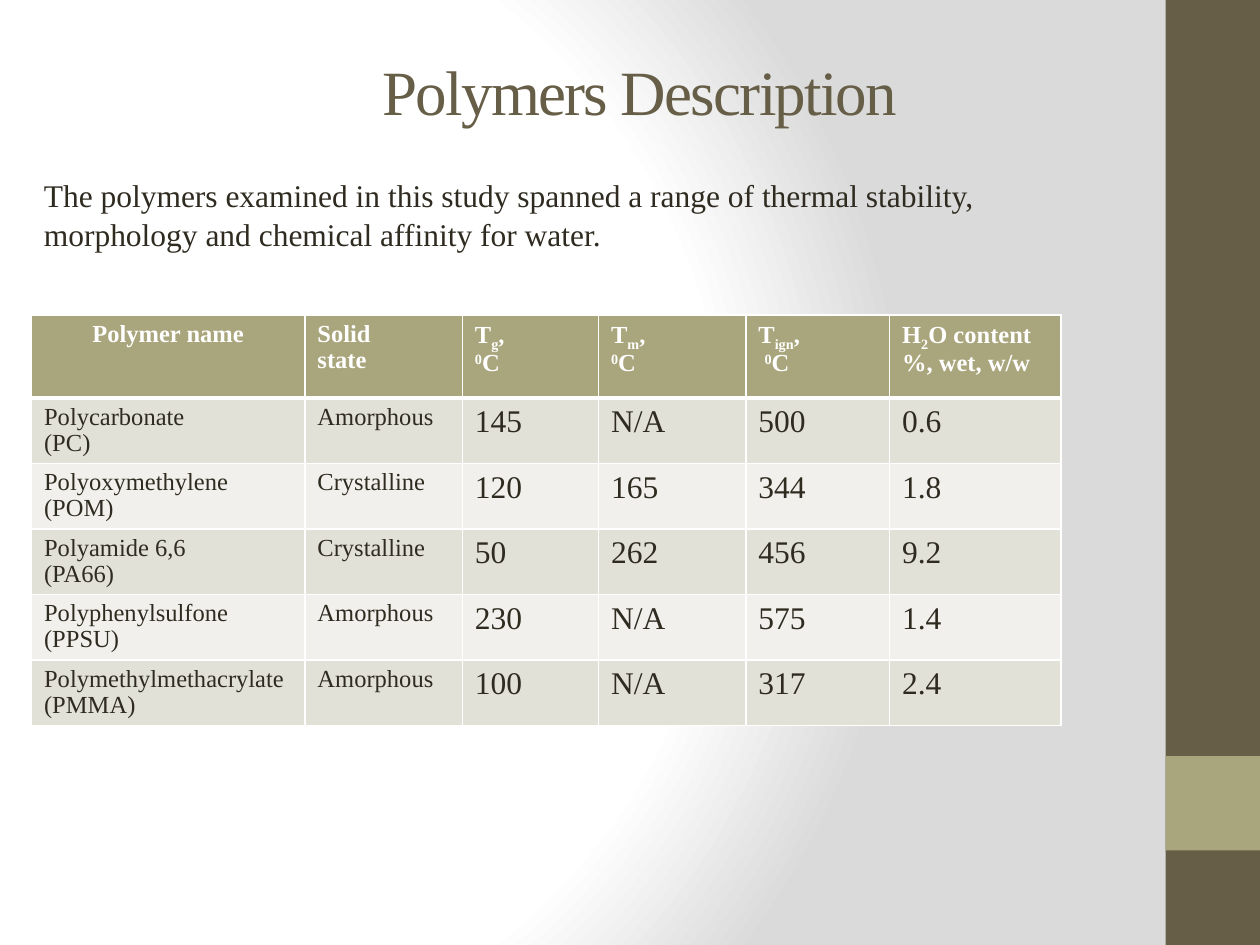
from lxml import etree
from pptx import Presentation
from pptx.dml.color import RGBColor
from pptx.enum.shapes import MSO_SHAPE
from pptx.enum.text import MSO_ANCHOR, PP_ALIGN
from pptx.oxml import parse_xml
from pptx.oxml.ns import nsdecls, qn
from pptx.util import Inches, Pt

RECTANGLE = MSO_SHAPE.RECTANGLE
MIDDLE, TOP = MSO_ANCHOR.MIDDLE, MSO_ANCHOR.TOP
CENTER, LEFT = PP_ALIGN.CENTER, PP_ALIGN.LEFT

FONT = "Times New Roman"
COLORS = {
    "brown": "675E47", "olive": "A9A57C", "ink": "2F2B20", "white": "FFFFFF",
    "grey": "DADADA", "odd_row": "E2E1D7", "even_row": "F1F0EC",
}
TITLE = "Polymers Description"
INTRO = ("The polymers examined in this study spanned a range of thermal stability, "
         "morphology and chemical affinity for water.")
SUB, SUPER = -25, 30
DEGREES = [("0", SUPER), ("C", 0)]
HEADERS = [
    ["Polymer name"],
    ["Solid", "state"],
    [[("T", 0), ("g", SUB), (",", 0)], DEGREES],
    [[("T", 0), ("m", SUB), (",", 0)], DEGREES],
    [[("T", 0), ("ign", SUB), (",", 0)], [(" ", 0), *DEGREES]],
    [[("H", 0), ("2", SUB), ("O content %, wet, w/w", 0)]],
]
POLYMERS = [
    ("Polycarbonate", "(PC)", "Amorphous", "145", "N/A", "500", "0.6"),
    ("Polyoxymethylene", "(POM)", "Crystalline", "120", "165", "344", "1.8"),
    ("Polyamide 6,6", "(PA66)", "Crystalline", "50", "262", "456", "9.2"),
    ("Polyphenylsulfone", "(PPSU)", "Amorphous", "230", "N/A", "575", "1.4"),
    ("Polymethylmethacrylate", "(PMMA)", "Amorphous", "100", "N/A", "317", "2.4"),
]
COLUMN_WIDTHS = [2.17, 1.25, 1.08, 1.17, 1.14, 1.36]
HEADER_HEIGHT, ROW_HEIGHT = 0.66, 0.52
SIDEBAR = [(0, 7.5, "brown"), (6, 0.75, "olive")]


def rgb(color):
    return RGBColor.from_string(COLORS[color])


def write(frame, paragraphs, size=18, color="ink", bold=False, align=LEFT,
          spacing=1.0, tracking=None):
    for index, content in enumerate(paragraphs):
        paragraph = frame.add_paragraph() if index else frame.paragraphs[0]
        paragraph.alignment = align
        paragraph.line_spacing = spacing
        pieces = [(content, 0)] if isinstance(content, str) else content
        for text, baseline in pieces:
            run = paragraph.add_run()
            run.text = text
            run.font.name = FONT
            run.font.size = Pt(size)
            run.font.bold = bold
            run.font.color.rgb = rgb(color)
            properties = run._r.get_or_add_rPr()
            if baseline:
                properties.set("baseline", str(baseline * 1000))
            if tracking:
                properties.set("spc", str(tracking * 100))


def paint_background(slide):
    stops = "".join(
        f'<a:gs pos="{position * 1000}"><a:srgbClr val="{COLORS[color]}"/></a:gs>'
        for position, color in [(0, "white"), (75, "white"), (100, "grey")])
    slide._element.cSld.insert(0, parse_xml(
        f'<p:bg {nsdecls("p", "a")}><p:bgPr><a:gradFill rotWithShape="1">'
        f'<a:gsLst>{stops}</a:gsLst><a:path path="circle">'
        '<a:fillToRect l="20000" t="50000" r="100000" b="50000"/></a:path>'
        '</a:gradFill><a:effectLst/></p:bgPr></p:bg>'))


def style_cell(cell, fill, top=1, bottom=1):
    properties = cell._tc.get_or_add_tcPr()
    for side, width in [("L", 1), ("R", 1), ("T", top), ("B", bottom)]:
        line = etree.SubElement(properties, qn(f"a:ln{side}"), w=str(Pt(width)))
        solid = etree.SubElement(line, qn("a:solidFill"))
        etree.SubElement(solid, qn("a:srgbClr"), val=COLORS["white"])
    cell.fill.solid()
    cell.fill.fore_color.rgb = rgb(fill)


def add_sidebar(slide):
    for top, height, color in SIDEBAR:
        band = slide.shapes.add_shape(
            RECTANGLE, Inches(9.25), Inches(top), Inches(0.75), Inches(height))
        band.shadow.inherit = False
        band.fill.solid()
        band.fill.fore_color.rgb = rgb(color)
        band.line.fill.background()


def add_polymer_table(slide):
    heights = [HEADER_HEIGHT] + [ROW_HEIGHT] * len(POLYMERS)
    table = slide.shapes.add_table(
        len(heights), len(COLUMN_WIDTHS), Inches(0.25), Inches(2.5),
        Inches(sum(COLUMN_WIDTHS)), Inches(sum(heights))).table
    for column, width in zip(table.columns, COLUMN_WIDTHS):
        column.width = Inches(width)
    for row, height in zip(table.rows, heights):
        row.height = Inches(height)

    for column, header in enumerate(HEADERS):
        cell = table.cell(0, column)
        style_cell(cell, "olive", bottom=3)
        write(cell.text_frame, header, size=14, color="white", bold=True,
              align=LEFT if column else CENTER, spacing=0.96)
    for row, (name, code, *values) in enumerate(POLYMERS, 1):
        for column, lines in enumerate([[name, code], *([value] for value in values)]):
            cell = table.cell(row, column)
            style_cell(cell, "odd_row" if row % 2 else "even_row",
                       top=3 if row == 1 else 1)
            is_label = column < 2
            write(cell.text_frame, lines, size=14 if is_label else 18,
                  spacing=0.96 if is_label else 1.0)


def main():
    """Build the polymer description slide."""
    deck = Presentation()
    deck.slide_width, deck.slide_height = Inches(10), Inches(7.5)
    slide = deck.slides.add_slide(deck.slide_layouts[5])
    paint_background(slide)
    add_sidebar(slide)

    title = slide.shapes.title
    title.left, title.top = Inches(0.58), Inches(0.33)
    title.width, title.height = Inches(9), Inches(0.78)
    title.text_frame.vertical_anchor = MIDDLE
    write(title.text_frame, [TITLE], size=36, color="brown", align=CENTER, tracking=-1)

    add_polymer_table(slide)
    intro = slide.shapes.add_textbox(
        Inches(0.25), Inches(1.33), Inches(8.33), Inches(0.71)).text_frame
    intro.word_wrap = True
    intro.vertical_anchor = TOP
    write(intro, [INTRO], spacing=1.05)
    deck.save("out.pptx")


if __name__ == "__main__":
    main()
